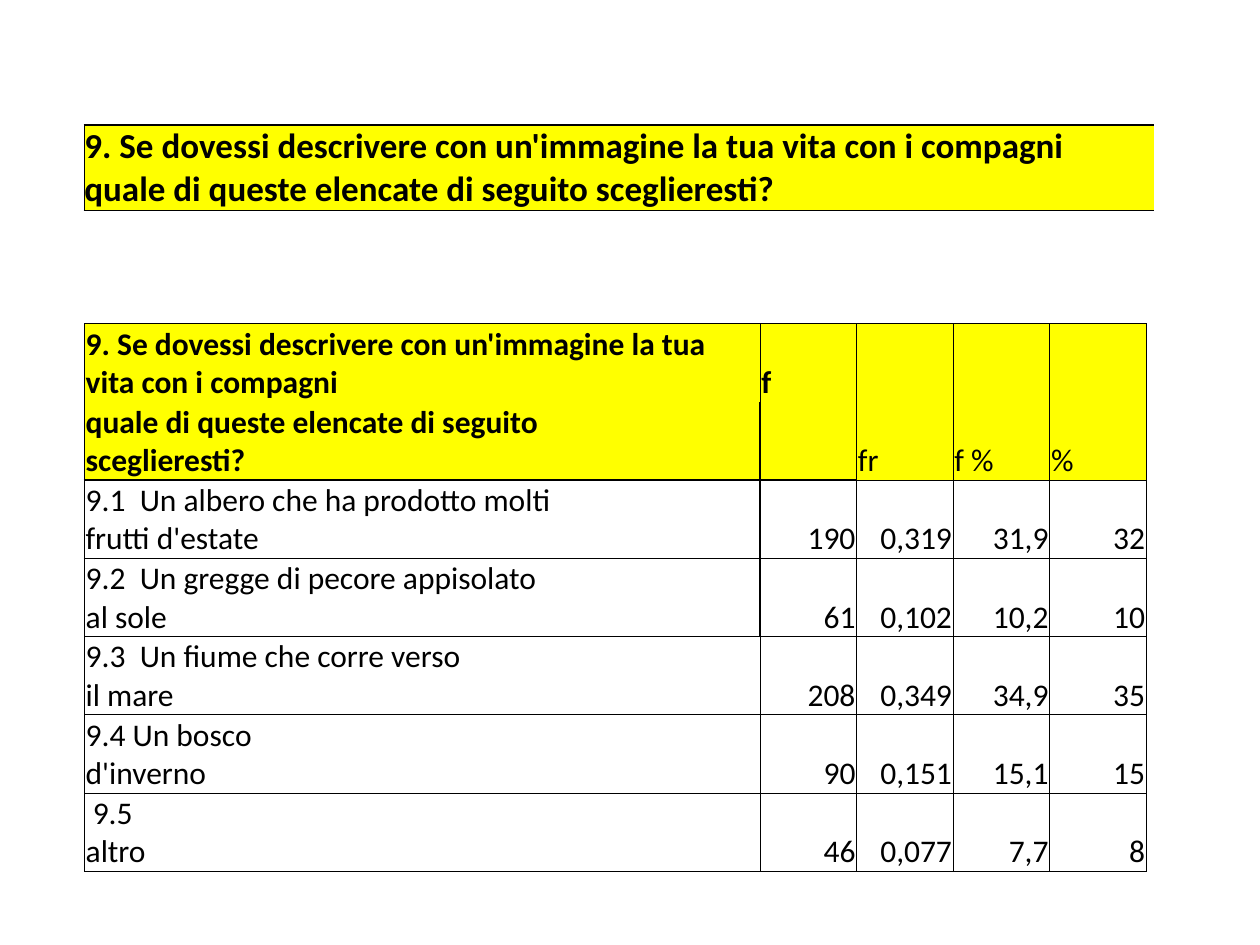
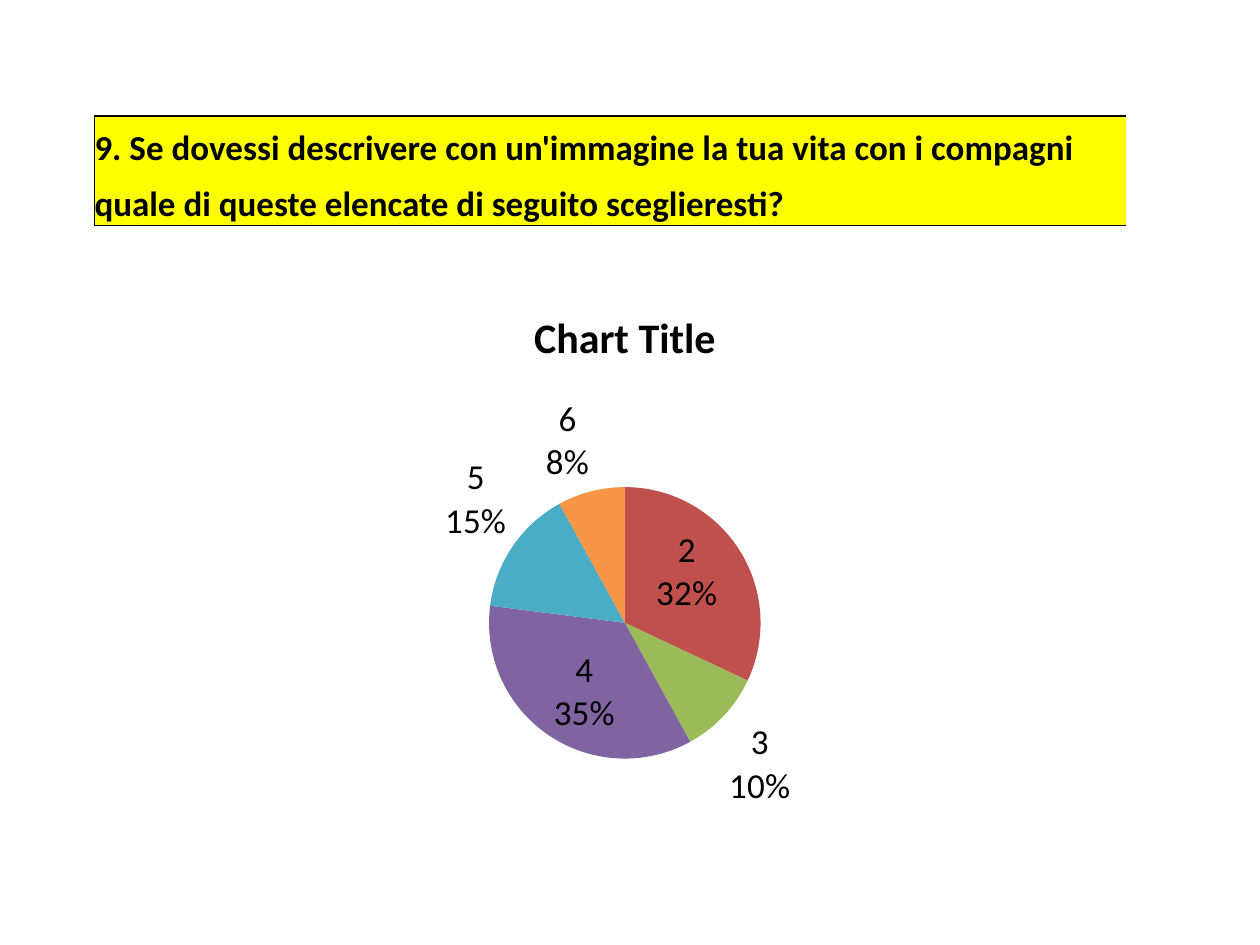
from dataclasses import dataclass
from typing import NamedTuple

from lxml.etree import SubElement
from pptx import Presentation
from pptx.chart.data import CategoryChartData as ChartData
from pptx.dml.color import RGBColor as Rgb
from pptx.enum.chart import XL_CHART_TYPE as Kind, XL_LABEL_POSITION as Place
from pptx.enum.text import MSO_ANCHOR as Anchor, PP_ALIGN as Align
from pptx.oxml import parse_xml
from pptx.oxml.ns import nsdecls, qn
from pptx.util import Inches, Pt


@dataclass(frozen=True)
class Theme:
    font: str = "Calibri"
    ink: str = "000000"
    band: str = "FFFF00"
    slices: tuple = ("4F81BD", "C0504D", "9BBB59", "8064A2", "4BACC6", "F79646")
    body: int = 18
    head: int = 20
    title: int = 24
    thin: float = 0.5
    thick: float = 1
    style: str = "{2D5ABB26-0587-4C30-8999-92F81FD0307C}"  # no style, no grid


class Banner(NamedTuple):
    left: float
    top: float
    cols: tuple
    rows: tuple


class Answer(NamedTuple):
    label: str
    span: int
    nums: tuple


THEME = Theme()
ASK = "9. Se dovessi descrivere con un'immagine la tua vita con i compagni"
PICK = "quale di queste elencate di seguito sceglieresti?"
BANNERS = (
    Banner(0.67, 0.99, (6.07, 1.21, 1.21), (0.34, 0.34)),
    Banner(0.75, 0.92, (5.85, 1.17, 1.17), (0.43, 0.44)),
)
HEADS = (
    Answer(ASK, 7, ("f", "", "", "")),
    Answer(PICK, 5, ("", "fr", "f %", "%")),
)
ANSWERS = (
    Answer("9.1  Un albero che ha prodotto molti frutti d'estate", 5,
           ("190", "0,319", "31,9", "32")),
    Answer("9.2  Un gregge di pecore appisolato al sole", 5,
           ("61", "0,102", "10,2", "10")),
    Answer("9.3  Un fiume che corre verso il mare", 4,
           ("208", "0,349", "34,9", "35")),
    Answer("9.4 Un bosco d'inverno", 3, ("90", "0,151", "15,1", "15")),
    Answer(" 9.5  altro", 1, ("46", "0,077", "7,7", "8")),
)
LABELS = 7  # grid columns under the answer labels
SHARES = (0, 32, 10, 35, 15, 8)


def style(font, size: int, bold: bool = False) -> None:
    font.name, font.size, font.bold = THEME.font, Pt(size), bold
    font.color.rgb = Rgb.from_string(THEME.ink)


def write(frame, text: str, *, size: int = THEME.body, bold: bool = False,
          align=Align.LEFT) -> None:
    para = frame.paragraphs[0]
    para.alignment = align
    run = para.add_run()
    run.text = text
    style(run.font, size, bold)


def edge(cell, sides: str, width: float) -> None:
    """Draw the sides named in LRTB and clear the others."""
    props = cell._tc.get_or_add_tcPr()
    for side in "LRTB":
        line = SubElement(props, qn(f"a:ln{side}"), w=str(Pt(width)))
        if side in sides:
            fill = SubElement(line, qn("a:solidFill"))
            SubElement(fill, qn("a:srgbClr"), val=THEME.ink)
        else:
            SubElement(line, qn("a:noFill"))


def dress(cell, sides: str, width: float, band: bool, inset: float = 0) -> None:
    edge(cell, sides, width)
    if band:
        cell.fill.solid()
        cell.fill.fore_color.rgb = Rgb.from_string(THEME.band)
    else:
        cell.fill.background()
    cell.vertical_anchor = Anchor.BOTTOM
    cell.margin_left = cell.margin_right = cell.margin_top = Inches(inset)
    cell.margin_bottom = 0


def grid(slide, left: float, top: float, cols: tuple, rows: tuple):
    table = slide.shapes.add_table(
        len(rows), len(cols), Inches(left), Inches(top),
        Inches(sum(cols)), Inches(sum(rows))).table
    props = table._tbl.tblPr
    props.find(qn("a:tableStyleId")).text = THEME.style
    table.first_row = table.horz_banding = False
    for col, width in zip(table.columns, cols):
        col.width = Inches(width)
    for row, height in zip(table.rows, rows):
        row.height = Inches(height)
    return table


def add_banner(slide, spec_: Banner) -> None:
    table = grid(slide, *spec_)
    for row, text in enumerate((ASK, PICK)):
        for col in range(len(spec_.cols)):
            sides = "TB"[row] + ("L" if col == 0 else "")
            dress(table.cell(row, col), sides, THEME.thick, True)
        write(table.cell(row, 0).text_frame, text, size=THEME.head, bold=True)
    table.cell(0, 0).merge(table.cell(0, 2))


def add_answers(slide) -> None:
    lines = HEADS + ANSWERS
    count = LABELS + len(HEADS[0].nums)
    table = grid(slide, 0.67, 2.57, (8.43 / count,) * count, (0.62,) * len(lines))
    for row, line in enumerate(lines):
        head = row < len(HEADS)
        for col in range(count):
            # The two heading rows read as one block
            sides = "".join(side for side, shown in (
                ("T", row != 1), ("B", row != 0),
                ("L", col == 0 or col >= LABELS), ("R", col >= LABELS - 1)) if shown)
            width = THEME.thick if col <= LABELS and row < 4 and row else THEME.thin
            dress(table.cell(row, col), sides, width, head, 0.01)
        write(table.cell(row, 0).text_frame, line.label, bold=head)
        for col, num in enumerate(line.nums, LABELS):
            if num:
                write(table.cell(row, col).text_frame, num, bold=num == "f",
                      align=Align.LEFT if head else Align.RIGHT)
        if line.span > 1:
            table.cell(row, 0).merge(table.cell(row, line.span - 1))


def add_pie(slide) -> None:
    data = ChartData()
    data.categories = [str(num + 1) for num in range(len(SHARES))]
    data.add_series("Series 1", SHARES)
    chart = slide.shapes.add_chart(
        Kind.PIE, Inches(1.06), Inches(2.25), Inches(7.8), Inches(4.49), data).chart
    style(chart.font, THEME.head)
    chart.has_legend = False
    chart.has_title = True
    write(chart.chart_title.text_frame, "Chart Title", size=THEME.title,
          bold=True, align=Align.CENTER)
    plot = chart.plots[0]
    plot.vary_by_categories = True
    for num, color in enumerate(THEME.slices):
        fill = plot.series[0].points[num].format.fill
        fill.solid()
        fill.fore_color.rgb = Rgb.from_string(color)

    # Category over percentage on each slice
    plot.has_data_labels = True
    marks = plot.data_labels
    marks.show_value = False
    marks.show_category_name = marks.show_percentage = True
    marks.position = Place.BEST_FIT
    style(marks.font, THEME.head)
    gap = parse_xml(f"<c:separator {nsdecls('c')}>\n</c:separator>")
    marks._element.find(qn("c:showBubbleSize")).addnext(gap)

    # Fixed plot area
    area = chart._chartSpace.find(".//" + qn("c:plotArea"))
    for old in area.findall(qn("c:layout")):
        area.remove(old)
    layout = parse_xml(f"<c:layout {nsdecls('c')}/>")
    area.insert(0, layout)
    manual = SubElement(layout, qn("c:manualLayout"))
    for name, val in (("layoutTarget", "inner"), ("xMode", "edge"), ("yMode", "edge"),
                      ("x", "0.36"), ("y", "0.36"), ("w", "0.28"), ("h", "0.48")):
        SubElement(manual, qn(f"c:{name}"), val=val)


def main() -> None:
    deck = Presentation()
    deck.slide_width, deck.slide_height = Inches(10), Inches(7.5)
    for banner, draw in zip(BANNERS, (add_answers, add_pie)):
        slide = deck.slides.add_slide(deck.slide_layouts[6])
        draw(slide)
        add_banner(slide, banner)
    deck.save("out.pptx")


if __name__ == "__main__":
    main()
